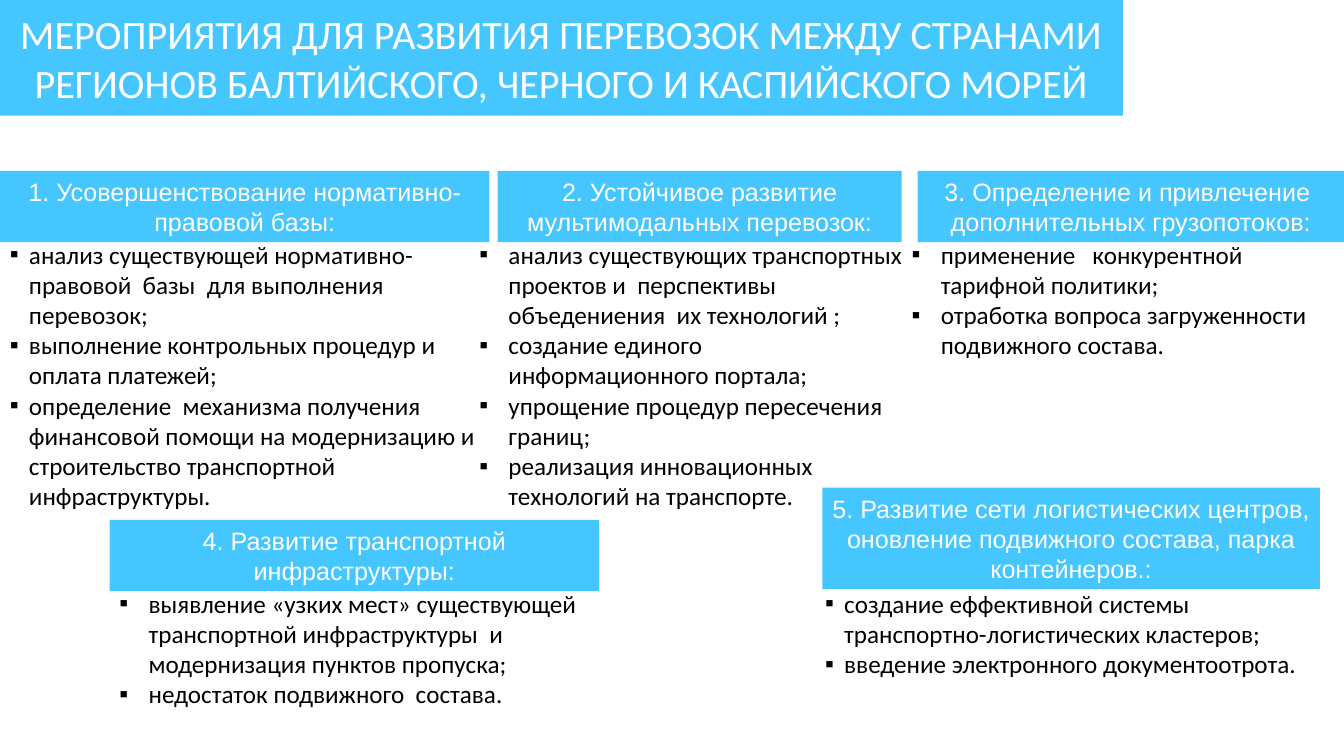
from lxml.etree import SubElement
from pptx import Presentation
from pptx.dml.color import RGBColor
from pptx.enum.shapes import MSO_SHAPE
from pptx.enum.text import MSO_ANCHOR, MSO_AUTO_SIZE, PP_ALIGN
from pptx.oxml.ns import qn
from pptx.util import Inches, Pt

COLORS = {"band": "00B2FF", "light": "FFFFFF", "text": "000000"}
BAND_OPACITY = 73000
NARROW, WIDE = 0.19, 0.29

TITLE = ("МЕРОПРИЯТИЯ ДЛЯ РАЗВИТИЯ ПЕРЕВОЗОК МЕЖДУ СТРАНАМИ "
         "РЕГИОНОВ БАЛТИЙСКОГО, ЧЕРНОГО И КАСПИЙСКОГО МОРЕЙ")

# Each measure: heading, its box, list box, (left margin, hanging indent), items
MEASURES = [
    ("1. Усовершенствование нормативно-правовой базы:",
     (0, 1.7, 4.87, 0.71), (0, 2.33, 4.87, 2.83), (NARROW, NARROW),
     ["анализ существующей нормативно-правовой  базы  для выполнения перевозок;",
      "выполнение контрольных процедур и оплата платежей;",
      "определение  механизма получения финансовой помощи на модернизацию "
      "и строительство транспортной инфраструктуры."]),
    ("2. Устойчивое развитие мультимодальных перевозок:",
     (4.95, 1.7, 4.02, 0.71), (4.48, 2.33, 4.65, 3.13), (0.48, WIDE),
     ["анализ существующих транспортных проектов и  перспективы  "
      "объедениения  их технологий ;",
      "создание единого информационного портала;",
      "упрощение процедур пересечения границ;",
      "реализация инновационных технологий на транспорте."]),
    ("3. Определение и привлечение  дополнительных грузопотоков:",
     (9.13, 1.7, 4.24, 0.71), (8.97, 2.33, 4.41, 1.31), (WIDE, WIDE),
     ["применение   конкурентной тарифной политики;",
      "отработка вопроса загруженности подвижного состава."]),
    ("4. Развитие транспортной инфраструктуры:",
     (1.09, 5.17, 4.87, 0.71), (1.09, 5.8, 4.8, 1.31), (WIDE, WIDE),
     ["выявление «узких мест» существующей транспортной инфраструктуры  "
      "и модернизация пунктов пропуска;",
      "недостаток подвижного  состава."]),
    ("5. Развитие сети логистических центров, оновление подвижного состава, "
     "парка контейнеров.:",
     (8.18, 4.85, 4.95, 1.01), (8.11, 5.8, 5.27, 1.01), (NARROW, NARROW),
     ["создание еффективной системы транспортно-логистических кластеров;",
      "введение электронного документоотрота."]),
]


class MeasuresSlide:
    """Holds the slide and the style shared by its elements."""

    def __init__(self, presentation):
        self.slide = presentation.slides.add_slide(presentation.slide_layouts[5])

    def add_text(self, paragraph, text, font, size, color):
        run = paragraph.add_run()
        run.text = text
        run.font.name = font
        run.font.size = Pt(size)
        run.font.color.rgb = RGBColor.from_string(COLORS[color])

    def style_band(self, shape, text, font, size):
        shape.fill.solid()
        shape.fill.fore_color.rgb = RGBColor.from_string(COLORS["band"])
        color = shape._element.spPr.find(qn("a:solidFill"))[0]
        SubElement(color, qn("a:alpha")).set("val", str(BAND_OPACITY))
        shape.line.fill.background()
        frame = shape.text_frame
        frame.word_wrap = True
        frame.auto_size = MSO_AUTO_SIZE.NONE
        frame.vertical_anchor = MSO_ANCHOR.MIDDLE
        paragraph = frame.paragraphs[0]
        paragraph.alignment = PP_ALIGN.CENTER
        self.add_text(paragraph, text, font, size, "light")

    def title(self, text, box):
        shape = self.slide.shapes.title
        shape.left, shape.top, shape.width, shape.height = map(Inches, box)
        self.style_band(shape, text, "Calibri", 28.8)

    def heading(self, text, box):
        shape = self.slide.shapes.add_shape(MSO_SHAPE.RECTANGLE, *map(Inches, box))
        shape.shadow.inherit = False
        self.style_band(shape, text, "Arial", 18)

    def bullets(self, items, box, indents):
        frame = self.slide.shapes.add_textbox(*map(Inches, box)).text_frame
        frame.word_wrap = True
        margin, hanging = map(Inches, indents)
        for index, item in enumerate(items):
            paragraph = frame.add_paragraph() if index else frame.paragraphs[0]
            properties = paragraph._p.get_or_add_pPr()
            properties.set("marL", str(margin))
            properties.set("indent", str(-hanging))
            SubElement(properties, qn("a:buFont")).set("typeface", "Arial")
            SubElement(properties, qn("a:buChar")).set("char", "▪")
            self.add_text(paragraph, item, "Calibri", 18, "text")


def main():
    presentation = Presentation()
    presentation.slide_width = Inches(13.37)
    presentation.slide_height = Inches(7.5)
    page = MeasuresSlide(presentation)

    # Title band
    page.title(TITLE, (0, 0, 11.17, 1.15))

    # Five measures, each a heading with its list
    for heading, heading_box, list_box, indents, items in MEASURES:
        page.heading(heading, heading_box)
        page.bullets(items, list_box, indents)

    presentation.save("out.pptx")


if __name__ == "__main__":
    main()
